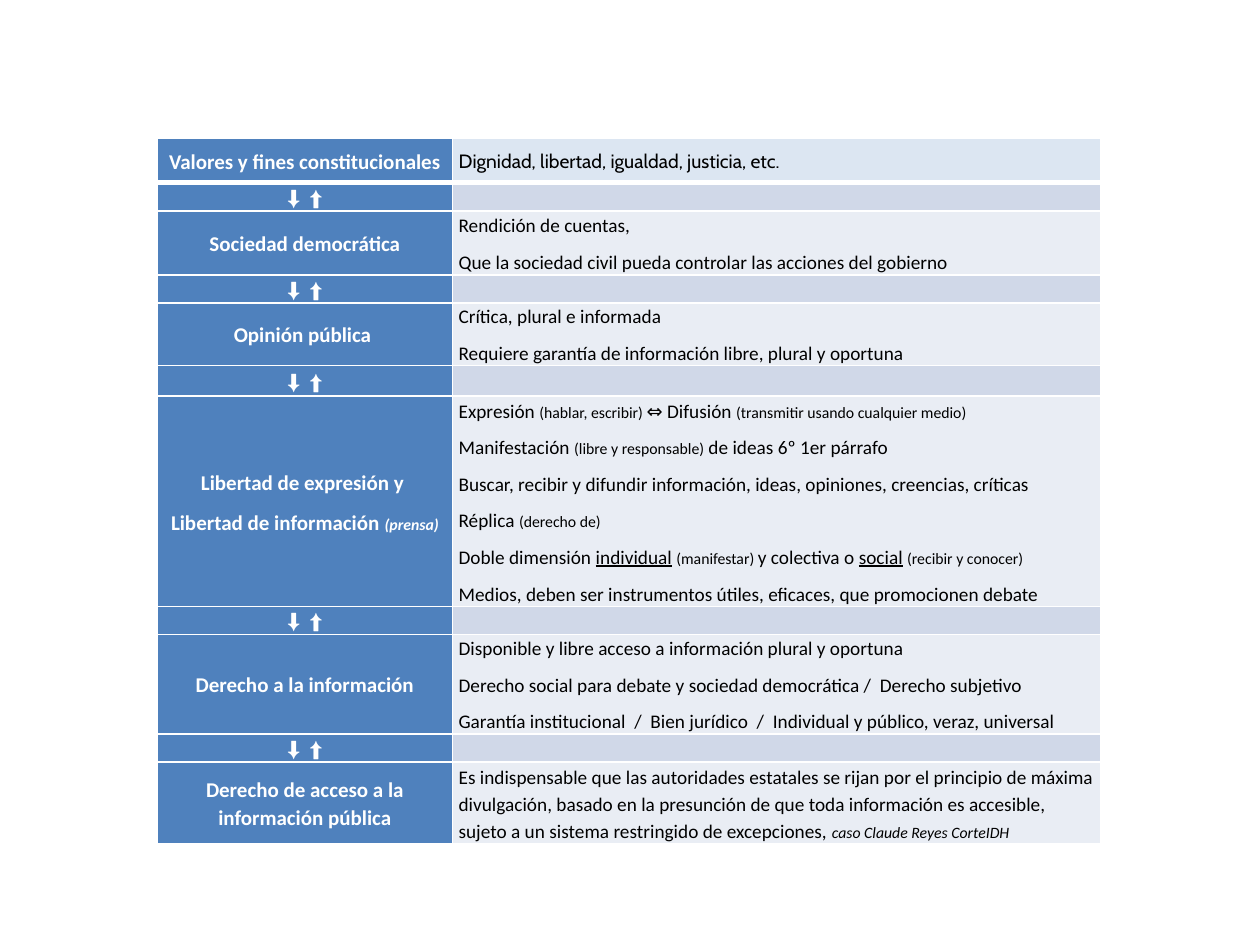
from pptx import Presentation
from pptx.dml.color import RGBColor
from pptx.enum import text
from pptx.oxml import parse_xml
from pptx.oxml.ns import nsdecls
from pptx.util import Inches, Pt

BLUE = RGBColor(0x4F, 0x81, 0xBD)
PALE_BLUE = RGBColor(0xDC, 0xE6, 0xF2)
BAND_DARK = RGBColor(0xD0, 0xD8, 0xE8)
BAND_LIGHT = RGBColor(0xE9, 0xED, 0xF4)
WHITE = RGBColor(0xFF, 0xFF, 0xFF)
BLACK = RGBColor(0, 0, 0)

# Run styles
SMALL = {"size": 9}
NOTE = {"size": 9, "italic": True}
UNDERLINED = {"underline": True}

# Paragraph spacing
TIGHT = {"before": 3, "after": 3}
LOOSE = {"line": 1.15}

# Content: a paragraph is a list of runs, a run is text or (text, style)
LEVELS = [
    {"height": 0.35, "label": [["Valores y fines constitucionales"]], "label_spacing": TIGHT,
     "body": [["Dignidad, libertad, igualdad, justicia, etc."]],
     "font": "Cabin", "fill": PALE_BLUE},
    {"height": 0.46, "label": [["Sociedad democrática"]], "label_spacing": TIGHT,
     "body": [["Rendición de cuentas,"],
              ["Que la sociedad civil pueda controlar las acciones del gobierno"]],
     "first_spacing": LOOSE},
    {"height": 0.45, "label": [["Opinión pública "]], "label_spacing": TIGHT,
     "body": [["Crítica, plural e informada"],
              ["Requiere garantía de información libre, plural y oportuna"]]},
    {"height": 1.48,
     "label": [["Libertad de expresión y "],
               ["Libertad de información ", ("(prensa)", NOTE)]],
     "label_spacing": LOOSE,
     "body": [["Expresión ", ("(hablar, escribir) ", SMALL), "⇔ Difusión ",
               ("(transmitir usando cualquier medio)", SMALL)],
              ["Manifestación ", ("(libre y responsable)", SMALL),
               " de ideas 6º 1er párrafo"],
              ["Buscar, recibir y difundir información, ideas, opiniones, creencias, críticas"],
              ["Réplica ", ("(derecho de)", SMALL)],
              ["Doble dimensión ", ("individual", UNDERLINED), " ",
               ("(manifestar) ", SMALL), "y colectiva o ", ("social", UNDERLINED), " ",
               ("(recibir y conocer)", SMALL)],
              ["Medios, deben ser instrumentos útiles, eficaces, que promocionen debate"]],
     "first_spacing": LOOSE},
    {"height": 0.7, "label": [["Derecho a la información"]],
     "body": [["Disponible y libre acceso a información plural y oportuna"],
              ["Derecho social para debate y sociedad democrática /  Derecho subjetivo"],
              ["Garantía institucional  /  Bien jurídico  /  Individual y público, veraz, universal"]]},
    {"height": 0.6, "label": [["Derecho de acceso a la información pública"]],
     "body": [["Es indispensable que las autoridades estatales se rijan por el principio de "
               "máxima divulgación, basado en la presunción de que toda información es "
               "accesible, sujeto a un sistema restringido de excepciones, ",
               ("caso Claude Reyes CorteIDH", NOTE)]],
     "first_spacing": {"line": 1.15, "after": 6}},
]
ARROWS = [["⬇  ⬆"]]
ARROW_HEIGHTS = [0.22, 0.22, 0.24, 0.22, 0.22]
COLUMNS = [2.34, 5.15]
LEFT, TOP = 1.25, 1.1


def write_paragraph(paragraph, runs, size, color, bold=False, font="Calibri",
                    align=text.PP_ALIGN.LEFT, line=1.1, before=6, after=0):
    paragraph.alignment = align
    paragraph.line_spacing = line
    paragraph.space_before = Pt(before)
    paragraph.space_after = Pt(after)
    for item in runs:
        content, style = (item, {}) if isinstance(item, str) else item
        run = paragraph.add_run()
        run.text = content
        run.font.name = font
        run.font.size = Pt(style.get("size", size))
        run.font.bold = bold
        run.font.italic = style.get("italic", False)
        run.font.underline = style.get("underline", False)
        run.font.color.rgb = color


def format_cell(cell, fill, bottom=1, top=1):
    cell.margin_left = cell.margin_right = Inches(0.05)
    cell.margin_top = cell.margin_bottom = 0
    cell.vertical_anchor = text.MSO_ANCHOR.MIDDLE
    cell.fill.solid()
    cell.fill.fore_color.rgb = fill
    properties = cell._tc.get_or_add_tcPr()
    sides = {"lnL": 1, "lnR": 1, "lnT": top, "lnB": bottom}
    for index, (side, width) in enumerate(sides.items()):
        properties.insert(index, parse_xml(
            f'<a:{side} {nsdecls("a")} w="{Pt(width)}"><a:solidFill>'
            f'<a:srgbClr val="{WHITE}"/></a:solidFill></a:{side}>'))


def write_cell(cell, paragraphs, first_spacing=None, spacing=None, **style):
    frame = cell.text_frame
    for index, runs in enumerate(paragraphs):
        paragraph = frame.paragraphs[0] if index == 0 else frame.add_paragraph()
        extra = first_spacing if index == 0 and first_spacing else spacing
        write_paragraph(paragraph, runs, **style, **(extra or {}))


def write_label(cell, paragraphs, spacing=None):
    write_cell(cell, paragraphs, spacing=spacing, size=12, color=WHITE, bold=True,
               align=text.PP_ALIGN.CENTER)


def main():
    presentation = Presentation()
    presentation.slide_width, presentation.slide_height = Inches(10), Inches(7.5)
    slide = presentation.slides.add_slide(presentation.slide_layouts[6])

    # Table: one row per level, with an arrow row between neighbours
    row_count = 2 * len(LEVELS) - 1
    heights = [0] * row_count
    heights[::2] = [level["height"] for level in LEVELS]
    heights[1::2] = ARROW_HEIGHTS
    table = slide.shapes.add_table(row_count, 2, Inches(LEFT), Inches(TOP),
                                   Inches(sum(COLUMNS)), Inches(sum(heights))).table
    for column, width in zip(table.columns, COLUMNS):
        column.width = Inches(width)

    for index, height in enumerate(heights):
        table.rows[index].height = Inches(height)
        label, body = table.cell(index, 0), table.cell(index, 1)
        level = LEVELS[index // 2] if index % 2 == 0 else None
        body_fill = level.get("fill", BAND_LIGHT) if level else BAND_DARK
        for cell, fill in ((label, BLUE), (body, body_fill)):
            format_cell(cell, fill, bottom=3 if index == 0 else 1,
                        top=3 if index == 1 else 1)
        if level:
            write_label(label, level["label"], level.get("label_spacing"))
            write_cell(body, level["body"], level.get("first_spacing"),
                       size=11, color=BLACK, font=level.get("font", "Calibri"))
        else:
            write_label(label, ARROWS)
            # A small end mark keeps the empty cell from stretching its row
            body.text_frame.paragraphs[0]._p.append(
                parse_xml(f'<a:endParaRPr {nsdecls("a")} sz="1100"/>'))

    presentation.save("out.pptx")


if __name__ == "__main__":
    main()
